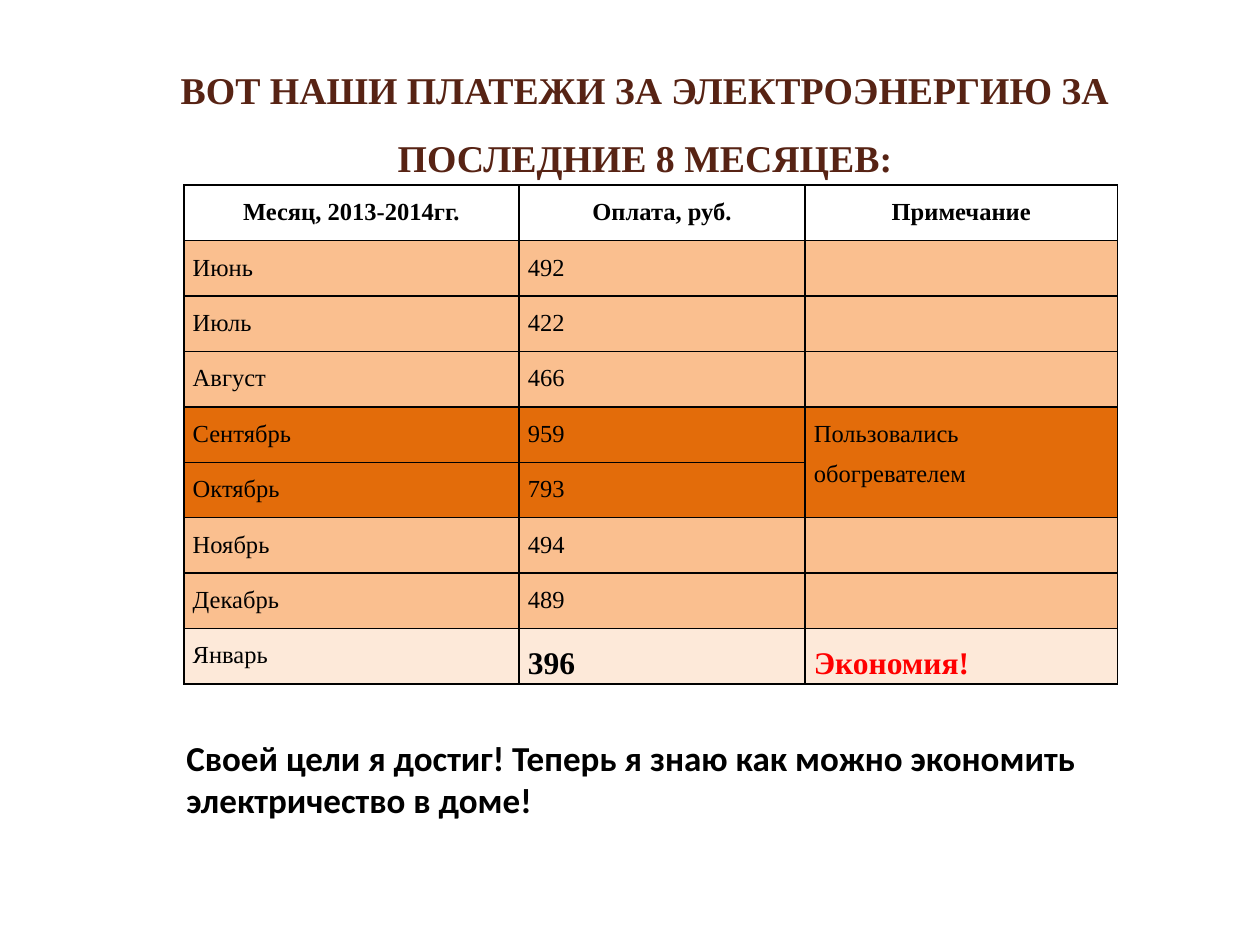
import pptx
import pptx.dml.color
import pptx.enum.text
import pptx.oxml
import pptx.oxml.ns
import pptx.util
from lxml import etree

RGBColor = pptx.dml.color.RGBColor
Inches = pptx.util.Inches
Pt = pptx.util.Pt
ALIGN = pptx.enum.text.PP_ALIGN
ANCHOR = pptx.enum.text.MSO_ANCHOR

BLACK = RGBColor(0x00, 0x00, 0x00)
WHITE = RGBColor(0xFF, 0xFF, 0xFF)
BROWN = RGBColor(0x57, 0x23, 0x14)
RED = RGBColor(0xFF, 0x00, 0x00)
USUAL = RGBColor(0xFA, 0xBF, 0x8F)
HIGH = RGBColor(0xE3, 0x6C, 0x0A)
LOW = RGBColor(0xFD, 0xE9, 0xD9)
SERIF = "Times New Roman"

TITLE = "ВОТ НАШИ ПЛАТЕЖИ ЗА ЭЛЕКТРОЭНЕРГИЮ ЗА ПОСЛЕДНИЕ 8 МЕСЯЦЕВ:"
CONCLUSION = [
    "Своей цели я достиг! Теперь я знаю как можно экономить",
    "электричество в доме!",
]
HEADER = ("Месяц, 2013-2014гг.", "Оплата, руб.", "Примечание")
PAYMENTS = [
    ("Июнь", "492", "", USUAL),
    ("Июль", "422", "", USUAL),
    ("Август", "466", "", USUAL),
    ("Сентябрь", "959", "Пользовались обогревателем", HIGH),
    ("Октябрь", "793", "", HIGH),
    ("Ноябрь", "494", "", USUAL),
    ("Декабрь", "489", "", USUAL),
    ("Январь", "396", "Экономия!", LOW),
]
HEATER_ROWS = (4, 5)
COLUMN_WIDTHS = (2.66, 2.27, 2.48)
ROW_HEIGHT = 0.44


def style(paragraph, size, color, bold=True, name=SERIF, align=ALIGN.LEFT, spacing=None):
    paragraph.alignment = align
    paragraph.line_spacing = spacing
    font = paragraph.font
    font.name, font.size, font.bold = name, Pt(size), bold
    font.color.rgb = color


def add_text(slide, box, lines, anchor=ANCHOR.TOP, **look):
    frame = slide.shapes.add_textbox(*map(Inches, box)).text_frame
    frame.word_wrap = True
    frame.vertical_anchor = anchor
    frame.text = "\n".join(lines)
    for paragraph in frame.paragraphs:
        style(paragraph, **look)
    return frame


def add_borders(cell):
    properties = cell._tc.get_or_add_tcPr()
    for position, side in enumerate(("lnL", "lnR", "lnT", "lnB")):
        line = pptx.oxml.parse_xml(
            f'<a:{side} {pptx.oxml.ns.nsdecls("a")} w="{Pt(1)}">'
            f'<a:solidFill><a:srgbClr val="{BLACK}"/></a:solidFill></a:{side}>'
        )
        properties.insert(position, line)


def fill_cell(cell, text, fill, **look):
    cell.margin_left = cell.margin_right = Inches(0.07)
    cell.margin_top = cell.margin_bottom = 0
    cell.fill.solid()
    cell.fill.fore_color.rgb = fill
    cell.text = text
    style(cell.text_frame.paragraphs[0], spacing=1.5, **look)
    add_borders(cell)


def add_payments(slide):
    row_count = len(PAYMENTS) + 1
    table = slide.shapes.add_table(
        row_count, len(HEADER), Inches(1.46), Inches(1.47),
        Inches(sum(COLUMN_WIDTHS)), Inches(ROW_HEIGHT * row_count),
    ).table
    for column, width in zip(table.columns, COLUMN_WIDTHS):
        column.width = Inches(width)
    for column, text in enumerate(HEADER):
        fill_cell(table.cell(0, column), text, WHITE,
                  size=14, color=BLACK, align=ALIGN.CENTER)
    for row, (*texts, fill) in enumerate(PAYMENTS, start=1):
        for column, text in enumerate(texts):
            saving = fill == LOW and column > 0
            fill_cell(table.cell(row, column), text, fill,
                      size=18 if saving else 14, bold=saving,
                      color=RED if saving and column == 2 else BLACK,
                      align=ALIGN.JUSTIFY)
    first, last = HEATER_ROWS
    table.cell(first, 2).merge(table.cell(last, 2))


def main():
    presentation = pptx.Presentation()
    presentation.slide_width, presentation.slide_height = Inches(10), Inches(7.5)
    slide = presentation.slides.add_slide(presentation.slide_layouts[6])
    add_payments(slide)
    title = add_text(slide, (0.43, 0.33, 9.38, 1.1), [TITLE], ANCHOR.BOTTOM,
                     size=21.6, color=BROWN, align=ALIGN.CENTER, spacing=1.5)
    title.margin_top = title.margin_bottom = 0
    add_text(slide, (1.38, 5.8, 7.45, 0.77), CONCLUSION,
             size=20, color=BLACK, name="Calibri")
    presentation.save("out.pptx")


if __name__ == "__main__":
    main()
